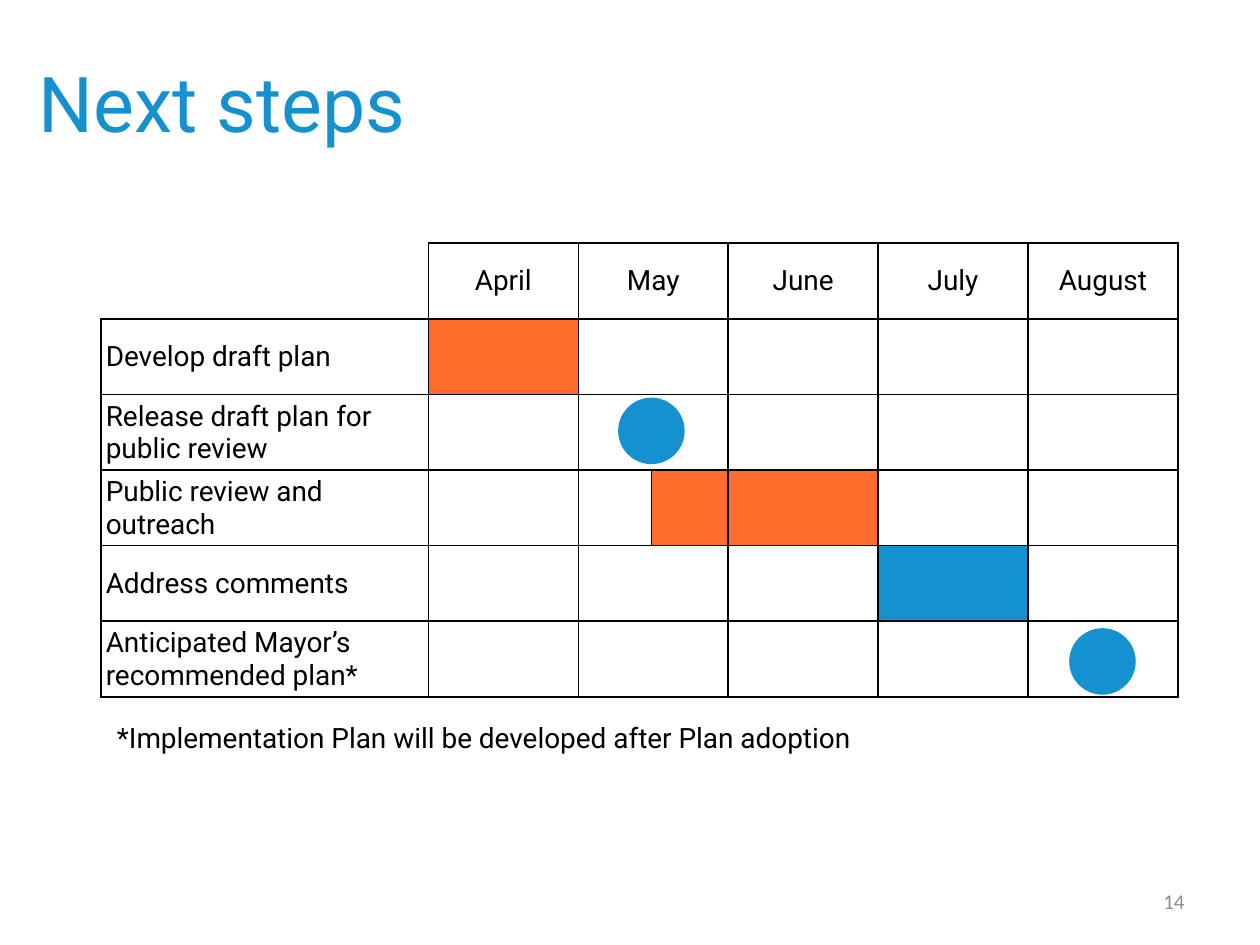
from lxml.etree import SubElement as Sub
from pptx import Presentation
from pptx.dml.color import RGBColor
from pptx.enum.shapes import MSO_SHAPE as Kind
from pptx.enum.text import MSO_ANCHOR as Anchor, PP_ALIGN as Align
from pptx.oxml.ns import qn
from pptx.util import Inches, Pt

BLACK = RGBColor(0x00, 0x00, 0x00)
WHITE = RGBColor(0xFF, 0xFF, 0xFF)
BLUE = RGBColor(0x16, 0x91, 0xD0)
ORANGE = RGBColor(0xFF, 0x6C, 0x2C)
GRAY = RGBColor(0x8C, 0x8C, 0x8C)

MONTHS = {1: "April", 2: "May", 4: "June", 5: "July", 6: "August"}
TASKS = [
    "Develop draft plan",
    "Release draft plan for public review",
    "Public review and outreach",
    "Address comments",
    "Anticipated Mayor’s recommended plan*",
]
BARS = {(1, 1): ORANGE, (3, 3): ORANGE, (3, 4): ORANGE, (4, 5): BLUE}
SPLIT_ROW = 3
WIDTHS = [2.6, 1.19, 0.58, 0.61, 1.19, 1.19, 1.19]
ROW = 0.6


class Deck:
    font = "Roboto"
    size = 16

    def __init__(self):
        self.file = Presentation()
        self.file.slide_width = Inches(10)
        self.file.slide_height = Inches(7.5)
        self.slide = self.file.slides.add_slide(self.file.slide_layouts[6])

    def label(self, frame, text, size=None, color=BLACK, font=None, align=Align.LEFT):
        frame.text = text
        line = frame.paragraphs[0]
        line.alignment = align
        for run in line.runs:
            run.font.size = Pt(size or self.size)
            run.font.name = font or self.font
            run.font.color.rgb = color

    def text(self, box, text, anchor=Anchor.MIDDLE, wrap=True, **style):
        frame = self.slide.shapes.add_textbox(*map(Inches, box)).text_frame
        frame.word_wrap = wrap
        frame.vertical_anchor = anchor
        self.label(frame, text, **style)

    def dot(self, left, top):
        dot = self.slide.shapes.add_shape(
            Kind.OVAL, Inches(left), Inches(top), Inches(0.5), Inches(0.5))
        dot.shadow.inherit = False
        dot.fill.solid()
        dot.fill.fore_color.rgb = BLUE
        dot.line.color.rgb = BLUE
        dot.line.width = Pt(2)

    def edge(self, cell, colors):
        props = cell._tc.get_or_add_tcPr()
        for side, color in zip("LRTB", colors):
            line = Sub(props, qn(f"a:ln{side}"), w=str(Pt(1)))
            fill = Sub(line, qn("a:solidFill"))
            Sub(fill, qn("a:srgbClr"), val=str(color))

    def grid(self, left, top, widths, count):
        table = self.slide.shapes.add_table(
            count, len(widths), Inches(left), Inches(top),
            Inches(sum(widths)), Inches(ROW * count)).table
        table.first_row = table.horz_banding = False
        for col, width in zip(table.columns, widths):
            col.width = Inches(width)
        for r, row in enumerate(table.rows):
            row.height = Inches(ROW)
            for c, cell in enumerate(row.cells):
                corner = r == c == 0
                self.edge(cell, (WHITE, BLACK, WHITE, BLACK) if corner else [BLACK] * 4)
                cell.fill.background()
                cell.vertical_anchor = Anchor.MIDDLE
        return table

    def plan(self):
        table = self.grid(0.8, 1.93, WIDTHS, len(TASKS) + 1)
        for r in range(len(TASKS) + 1):
            if r != SPLIT_ROW:
                table.cell(r, 2).merge(table.cell(r, 3))
        for c, month in MONTHS.items():
            self.label(table.cell(0, c).text_frame, month, align=Align.CENTER)
        for r, task in enumerate(TASKS, 1):
            cell = table.cell(r, 0)
            cell.margin_left = Inches(0.04)
            cell.margin_top = cell.margin_right = Inches(0.01)
            cell.margin_bottom = 0
            self.label(cell.text_frame, task)
        for spot, color in BARS.items():
            fill = table.cell(*spot).fill
            fill.solid()
            fill.fore_color.rgb = color


def main():
    deck = Deck()
    deck.text((0.21, 0.18, 9, 1.25), "Next steps", size=44, color=BLUE)
    deck.plan()
    deck.dot(4.92, 3.17)
    deck.text((7.17, 6.95, 2.33, 0.4), "14", size=12, color=GRAY,
              font="Calibri", align=Align.RIGHT)
    deck.text((0.83, 5.67, 6.1, 0.37),
              "*Implementation Plan will be developed after Plan adoption",
              anchor=Anchor.TOP, wrap=False)
    deck.dot(8.5, 5)
    deck.file.save("out.pptx")


if __name__ == "__main__":
    main()
